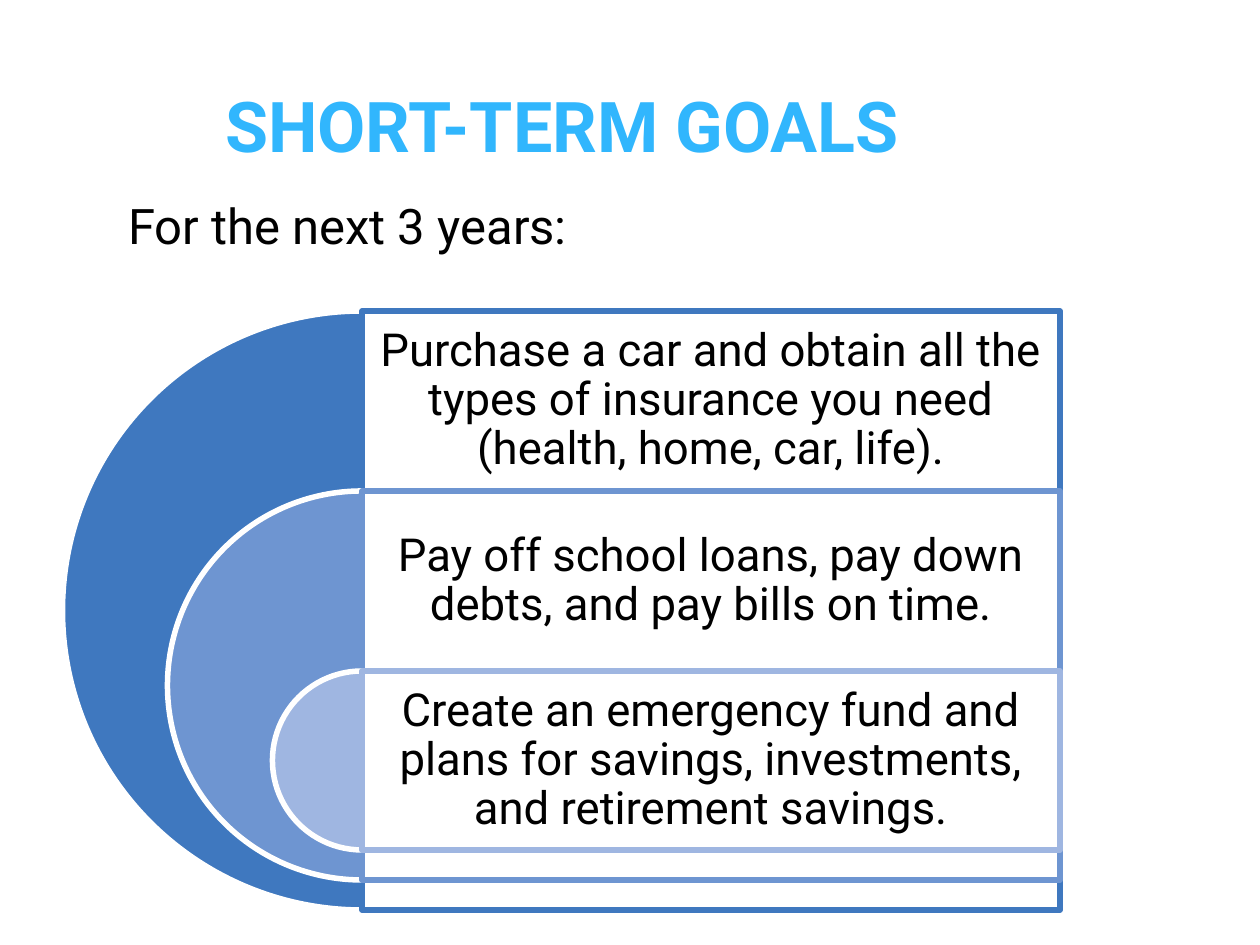
from pptx import Presentation, util as u
from pptx.dml.color import RGBColor
from pptx.enum import shapes, text
from pptx.oxml import parse_xml
from pptx.oxml.ns import nsdecls

SKY = RGBColor(0x31, 0xB6, 0xFD)
BLACK = RGBColor(0, 0, 0)
WHITE = RGBColor(255, 255, 255)
FONT = "Roboto"
TITLE = "SHORT-TERM GOALS"
LEAD = "For the next 3 years:"
GOALS = [
    ("Purchase a car and obtain all the types of insurance you need (health, home, car, life).",
     RGBColor(0x3F, 0x78, 0xBF)),
    ("Pay off school loans, pay down debts, and pay bills on time.",
     RGBColor(0x6E, 0x95, 0xD1)),
    ("Create an emergency fund and plans for savings, investments, and retirement savings.",
     RGBColor(0x9F, 0xB6, 0xE1)),
]
LEFT, TOP, WIDE = 362, 311, 698
ROW, SIZE, SHRINK = 180, 599, 210
INSET = 14


def px(n):
    return round(n * 914400 / 126)


def box(*at):
    return [px(n) for n in at]


def write(frame, words, size, color, align, bold=False):
    par = frame.paragraphs[0]
    par.alignment = align
    run = par.add_run()
    run.text = words
    font = run.font
    font.name, font.size, font.bold = FONT, u.Pt(size), bold
    font.color.rgb = color
    return par


def draw(group, kind, at, fill, line):
    shape = group.shapes.add_shape(kind, *box(*at))
    shape.shadow.inherit = False
    shape.fill.solid()
    shape.fill.fore_color.rgb = fill
    shape.line.color.rgb = line
    shape.line.width = u.Pt(3.15)
    return shape


def fade(shape, share):
    color = shape.fill._xPr.solidFill[0]
    color.append(parse_xml(f'<a:alpha {nsdecls("a")} val="{share * 1000}"/>'))


deck = Presentation()
deck.slide_width, deck.slide_height = box(1260, 945)
slide = deck.slides.add_slide(deck.slide_layouts[5])

head = slide.shapes.title
head.left, head.top, head.width, head.height = box(63, 44, 998, 123)
frame = head.text_frame
frame.auto_size = text.MSO_AUTO_SIZE.NONE
frame.vertical_anchor = text.MSO_ANCHOR.BOTTOM
frame.margin_left = frame.margin_right = u.Inches(0.05)
frame.margin_top = frame.margin_bottom = 0
write(frame, TITLE, 40, SKY, text.PP_ALIGN.CENTER, True)

group = slide.shapes.add_group_shape()
for i, (goal, color) in enumerate(GOALS):
    top, size = TOP + i * ROW, SIZE - i * SHRINK
    pie = draw(group, shapes.MSO_SHAPE.PIE, (LEFT - size / 2, top, size, size), color, WHITE)
    pie.adjustments[0], pie.adjustments[1] = 54, 162
    panel = draw(group, shapes.MSO_SHAPE.RECTANGLE, (LEFT, top, WIDE, size), WHITE, color)
    fade(panel, 90)
    frame = group.shapes.add_textbox(*box(LEFT, top, WIDE, ROW)).text_frame
    frame.word_wrap = True
    frame.vertical_anchor = text.MSO_ANCHOR.MIDDLE
    frame.margin_left = frame.margin_right = px(INSET)
    frame.margin_top = frame.margin_bottom = px(INSET)
    par = write(frame, goal, 26, BLACK, text.PP_ALIGN.CENTER)
    par.line_spacing, par.space_after = 0.9, u.Pt(9)

frame = slide.shapes.add_textbox(*box(116, 189, 557, 72)).text_frame
frame.word_wrap = True
frame.auto_size = text.MSO_AUTO_SIZE.SHAPE_TO_FIT_TEXT
write(frame, LEAD, 28, BLACK, text.PP_ALIGN.LEFT)

deck.save("out.pptx")
